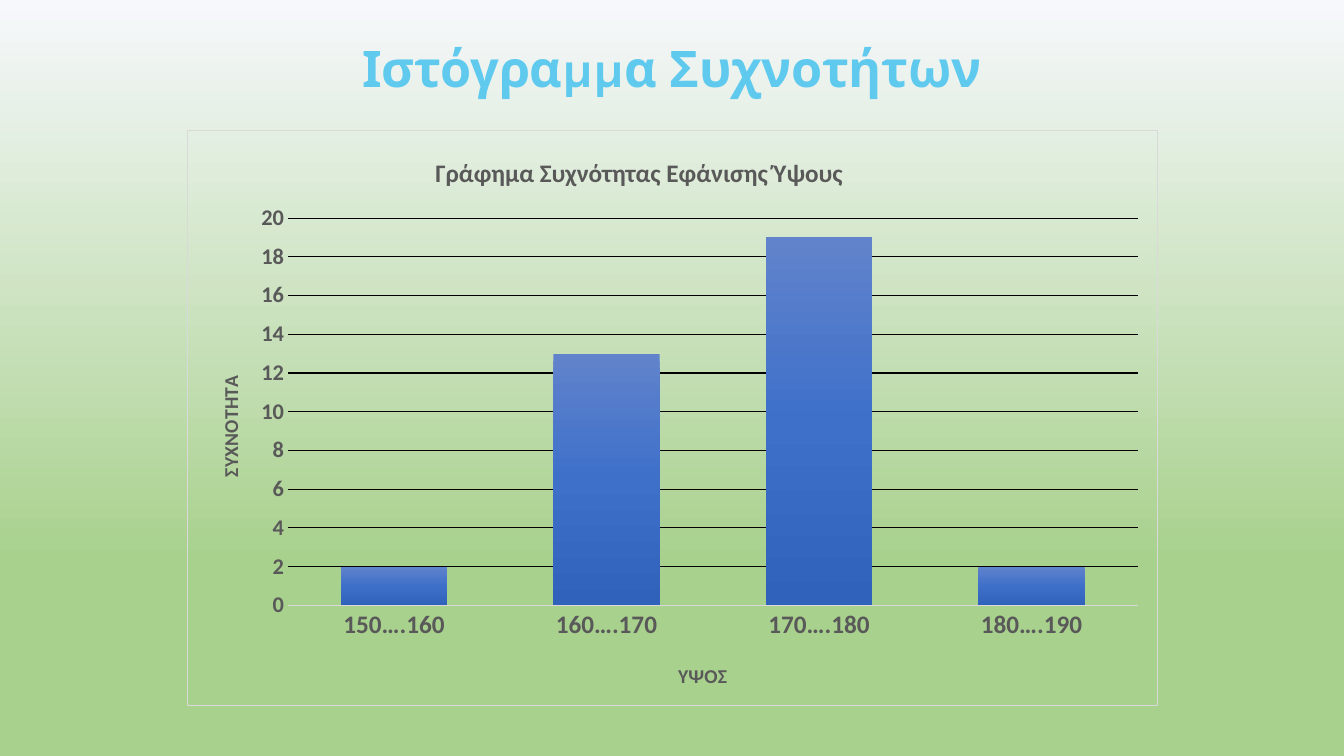
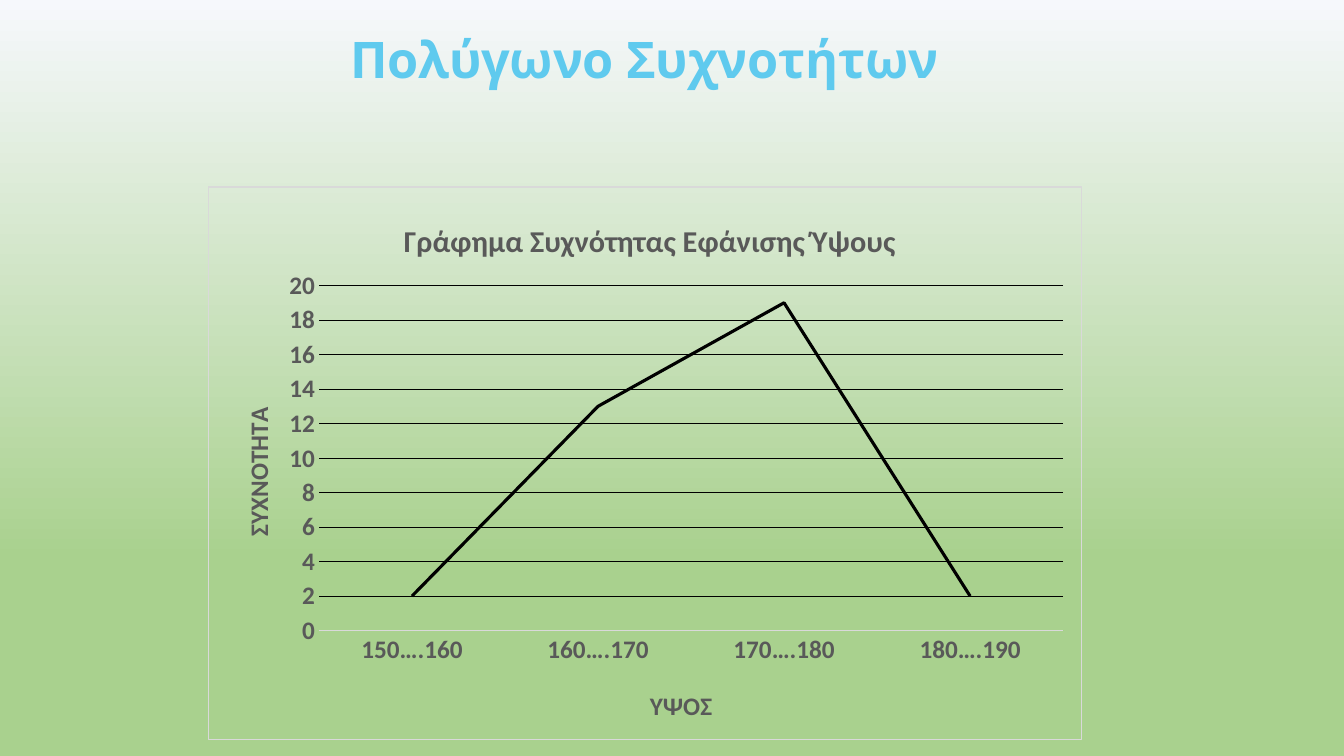
"""Build two slides with a frequency histogram and a frequency polygon."""
from lxml import etree
from pptx import Presentation
from pptx.chart.data import CategoryChartData
from pptx.dml.color import RGBColor
from pptx.enum.chart import XL_CHART_TYPE, XL_MARKER_STYLE, XL_TICK_MARK
from pptx.enum.text import MSO_ANCHOR, PP_ALIGN
from pptx.oxml import parse_xml
from pptx.oxml.ns import nsdecls, qn
from pptx.util import Inches, Pt

COLUMNS = XL_CHART_TYPE.COLUMN_CLUSTERED
LINE = XL_CHART_TYPE.LINE
NO_MARKER = XL_MARKER_STYLE.NONE
NO_TICK = XL_TICK_MARK.NONE
CENTER = PP_ALIGN.CENTER
MIDDLE = MSO_ANCHOR.MIDDLE

TITLE_FONT, CHART_FONT = "Karla", "Calibri"
TITLE_BLUE, GREY, PALE_GREY, BLACK = "5FCAEE", "595959", "D9D9D9", "000000"
BACKGROUND_STOPS = [(0, "F6F8FC"), (74, "A9D18E"), (100, "A9D18E")]
COLUMN_STOPS = [(0, "6183CB"), (50, "3E70CA"), (100, "3062BB")]

CATEGORIES = ["150….160", "160….170", "170….180", "180….190"]
FREQUENCIES = [2, 13, 19, 2]
CHART_TITLE = "Γράφημα Συχνότητας Εφάνισης Ύψους"
CATEGORY_TITLE = "ΥΨΟΣ"
VALUE_TITLE = "ΣΥΧΝΟΤΗΤΑ"

SLIDES = [
    {
        "title": "Ιστόγραμμα Συχνοτήτων",
        "title_box": (3.54, 0.35, 6.25, 0.62),
        "kind": COLUMNS,
        "chart_box": (1.85, 1.29, 9.64, 5.71),
        "plot_box": (2.85, 2.16, 8.44, 3.85),
        "chart_title": (4.27, 1.49, 18),
        "category_title": (6.69, 6.54, 14),
        "value_title": (2.11, 3.69, 14),
        "label_sizes": (18, 16),
    },
    {
        "title": "Πολύγωνο Συχνοτήτων",
        "title_box": (3.39, 0.26, 6, 0.62),
        "kind": LINE,
        "chart_box": (2.06, 1.85, 8.67, 5.49),
        "plot_box": (3.16, 2.83, 7.39, 3.43),
        "chart_title": (3.95, 2.12, 21.6),
        "category_title": (6.4, 6.79, 18),
        "value_title": (2.34, 4, 18),
        "label_sizes": (18, 18),
    },
]


def color(value):
    return RGBColor.from_string(value)


def set_font(font, name, size, value):
    font.name = name
    font.size = Pt(size)
    font.bold = True
    font.color.rgb = color(value)


def set_line(line, value, width):
    line.color.rgb = color(value)
    line.width = Pt(width)


def set_gradient(fill, element, stops):
    fill.gradient()
    fill.gradient_angle = 270
    stop_list = next(element.iter(qn("a:gsLst")))
    for stop in list(stop_list):
        stop_list.remove(stop)
    for position, value in stops:
        stop = etree.SubElement(stop_list, qn("a:gs"), pos=str(position * 1000))
        etree.SubElement(stop, qn("a:srgbClr"), val=value)


def place(element, chart_box, box, inner=False):
    left, top, width, height = chart_box
    settings = [("layoutTarget", "inner")] if inner else []
    settings += [("xMode", "edge"), ("yMode", "edge")]
    fractions = [(box[0] - left) / width, (box[1] - top) / height]
    if inner:
        fractions += [box[2] / width, box[3] / height]
    settings += [(name, f"{part:.4f}") for name, part in zip("xywh", fractions)]
    layout = element.find(qn("c:layout"))
    if layout is None:
        layout = etree.Element(qn("c:layout"))
        element.insert(0, layout)
    manual = etree.SubElement(layout, qn("c:manualLayout"))
    for name, value in settings:
        etree.SubElement(manual, qn(f"c:{name}"), val=value)


def add_chart_text(owner, text, chart_box, position):
    left, top, size = position
    run = owner.text_frame.paragraphs[0].add_run()
    run.text = text
    set_font(run.font, CHART_FONT, size, GREY)
    place(owner._element, chart_box, (left, top))


def add_title(slide, text, box):
    shape = slide.shapes.add_textbox(*map(Inches, box))
    frame = shape.text_frame
    frame.word_wrap = True
    frame.vertical_anchor = MIDDLE
    frame.margin_left = frame.margin_right = frame.margin_bottom = 0
    frame.margin_top = Inches(0.01)
    paragraph = frame.paragraphs[0]
    paragraph.alignment = CENTER
    run = paragraph.add_run()
    run.text = text
    set_font(run.font, TITLE_FONT, 36, TITLE_BLUE)
    run.font._element.set("spc", "-20")


def add_border(chart):
    border = parse_xml(
        f'<c:spPr {nsdecls("c", "a")}><a:noFill/><a:ln w="9525"><a:solidFill>'
        f'<a:srgbClr val="{PALE_GREY}"/></a:solidFill></a:ln></c:spPr>'
    )
    chart._chartSpace.find(qn("c:chart")).addnext(border)


def style_axes(chart, label_sizes):
    axes = chart.category_axis, chart.value_axis
    for axis, size in zip(axes, label_sizes):
        axis.major_tick_mark = axis.minor_tick_mark = NO_TICK
        set_font(axis.tick_labels.font, CHART_FONT, size, GREY)
    set_line(chart.category_axis.format.line, PALE_GREY, 0.75)
    value_axis = chart.value_axis
    value_axis.minimum_scale, value_axis.maximum_scale = 0, 20
    value_axis.major_unit = 2
    value_axis.format.line.fill.background()
    value_axis.has_major_gridlines = True
    set_line(value_axis.major_gridlines.format.line, BLACK, 0.75)


def style_series(chart, kind):
    plot = chart.plots[0]
    plot.vary_by_categories = False
    series = plot.series[0]
    if kind == COLUMNS:
        plot.gap_width = 100
        plot.overlap = -24
        set_gradient(series.format.fill, series._element, COLUMN_STOPS)
    else:
        series.smooth = False
        series.marker.style = NO_MARKER
        set_line(series.format.line, BLACK, 2.25)


def add_frequency_chart(slide, content):
    data = CategoryChartData()
    data.categories = CATEGORIES
    data.add_series("Series 1", FREQUENCIES)
    box = content["chart_box"]
    frame = slide.shapes.add_chart(content["kind"], *map(Inches, box), data)
    chart = frame.chart
    chart.has_legend = False
    set_font(chart.font, CHART_FONT, 18, GREY)
    add_border(chart)
    style_axes(chart, content["label_sizes"])
    style_series(chart, content["kind"])
    value_title = chart.value_axis.axis_title
    add_chart_text(chart.chart_title, CHART_TITLE, box, content["chart_title"])
    add_chart_text(chart.category_axis.axis_title, CATEGORY_TITLE, box,
                   content["category_title"])
    add_chart_text(value_title, VALUE_TITLE, box, content["value_title"])
    body = next(value_title._element.iter(qn("a:bodyPr")))
    body.set("rot", "-5400000")
    body.set("vert", "horz")
    plot_area = next(chart._chartSpace.iter(qn("c:plotArea")))
    place(plot_area, box, content["plot_box"], inner=True)


def main():
    presentation = Presentation()
    presentation.slide_width = Inches(13.33)
    presentation.slide_height = Inches(7.5)
    master = presentation.slide_master
    set_gradient(master.background.fill, master._element, BACKGROUND_STOPS)
    for content in SLIDES:
        slide = presentation.slides.add_slide(presentation.slide_layouts[6])
        add_title(slide, content["title"], content["title_box"])
        add_frequency_chart(slide, content)
    presentation.save("out.pptx")


if __name__ == "__main__":
    main()
